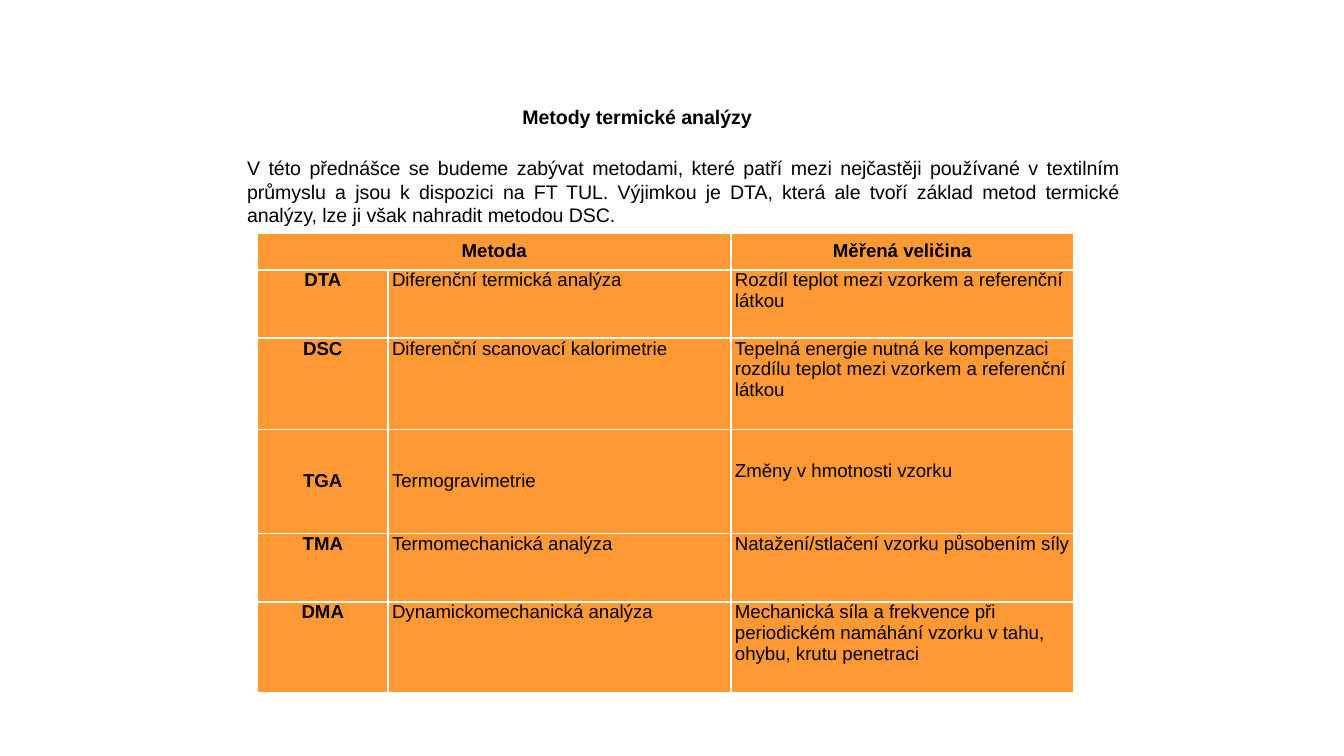
from pptx import Presentation
from pptx.dml.color import RGBColor
from pptx.enum.text import MSO_ANCHOR, PP_ALIGN
from pptx.oxml import parse_xml
from pptx.oxml.ns import nsdecls
from pptx.util import Cm, Pt

CENTER, LEFT, JUSTIFY = PP_ALIGN.CENTER, PP_ALIGN.LEFT, PP_ALIGN.JUSTIFY
TOP, MIDDLE = MSO_ANCHOR.TOP, MSO_ANCHOR.MIDDLE

COLORS = {"text": "000000", "cell": "FF9933", "border": "FFFFFF"}
FONT = "Arial"
TITLE = "Metody termické analýzy"
INTRO = (
    "V této přednášce se budeme zabývat metodami, které patří mezi nejčastěji "
    "používané v textilním průmyslu a jsou k dispozici na FT TUL. Výjimkou je DTA, "
    "která ale tvoří základ metod termické analýzy, lze ji však nahradit metodou DSC."
)
COL_WIDTHS = [2.46, 6.48, 6.48]
ROW_HEIGHTS = [0.7, 1.29, 1.72, 1.97, 1.29, 1.72]
METHODS = [
    ("DTA", "Diferenční termická analýza",
     "Rozdíl teplot mezi vzorkem a referenční látkou"),
    ("DSC", "Diferenční scanovací kalorimetrie",
     "Tepelná energie nutná ke kompenzaci rozdílu teplot mezi vzorkem a referenční látkou"),
    ("TGA", "Termogravimetrie", "Změny v hmotnosti vzorku"),
    ("TMA", "Termomechanická analýza", "Natažení/stlačení vzorku působením síly"),
    ("DMA", "Dynamickomechanická analýza",
     "Mechanická síla a frekvence při periodickém namáhání vzorku v tahu, ohybu, krutu penetraci"),
]


def write(tf, text, size, align, bold=False):
    """Put one formatted paragraph into a text frame."""
    p = tf.paragraphs[0]
    p.text = text
    p.alignment = align
    p.font.name = FONT
    p.font.size = Pt(size)
    p.font.bold = bold
    p.font.color.rgb = RGBColor.from_string(COLORS["text"])


def add_text(s, box, text, align, margin, bold=False, wrap=True):
    """Add a text box with equal vertical and given horizontal margins."""
    tf = s.shapes.add_textbox(*map(Cm, box)).text_frame
    tf.word_wrap = wrap
    tf.margin_left = tf.margin_right = Cm(margin)
    tf.margin_top = tf.margin_bottom = Cm(0.1)
    write(tf, text, 10.5, align, bold)


def style_cell(cell):
    """Give a cell its borders, fill and margins."""
    tc_pr = cell._tc.get_or_add_tcPr()
    for side in ("lnL", "lnR", "lnT", "lnB"):
        tc_pr.append(parse_xml(
            f'<a:{side} {nsdecls("a")} w="12700"><a:solidFill>'
            f'<a:srgbClr val="{COLORS["border"]}"/></a:solidFill></a:{side}>'))
    cell.fill.solid()
    cell.fill.fore_color.rgb = RGBColor.from_string(COLORS["cell"])
    cell.margin_left = cell.margin_right = Cm(0.08)
    cell.margin_top = cell.margin_bottom = 0


def fill_cell(cell, text, align, bold, anchor):
    """Write the text of one cell."""
    write(cell.text_frame, text, 10, align, bold)
    cell.vertical_anchor = anchor


def add_methods_table(s):
    """Add the table of methods and measured quantities."""
    table = s.shapes.add_table(
        len(ROW_HEIGHTS), len(COL_WIDTHS), Cm(4.87), Cm(4.4),
        Cm(sum(COL_WIDTHS)), Cm(sum(ROW_HEIGHTS))).table
    for column, width in zip(table.columns, COL_WIDTHS):
        column.width = Cm(width)
    for row, height in zip(table.rows, ROW_HEIGHTS):
        row.height = Cm(height)
    for cell in table.iter_cells():
        style_cell(cell)
    table.cell(0, 0).merge(table.cell(0, 1))
    for c, text in ((0, "Metoda"), (2, "Měřená veličina")):
        fill_cell(table.cell(0, c), text, CENTER, True, MIDDLE)
    for r, method in enumerate(METHODS, 1):
        anchor = MIDDLE if method[0] == "TGA" else TOP
        for c, text in enumerate(method):
            fill_cell(table.cell(r, c), text, LEFT if c else CENTER, c == 0, anchor)
    table.cell(3, 2).margin_bottom = Cm(0.4)


def main():
    """Build and save the slide."""
    prs = Presentation()
    prs.slide_width, prs.slide_height = Cm(25.4), Cm(14.28)
    s = prs.slides.add_slide(prs.slide_layouts[6])
    add_text(s, (9.58, 1.88, 4.93, 0.7), TITLE, CENTER, 0.25, bold=True, wrap=False)
    add_methods_table(s)
    add_text(s, (4.57, 2.85, 16.71, 1.55), INTRO, JUSTIFY, 0.1)
    prs.save("out.pptx")


if __name__ == "__main__":
    main()
